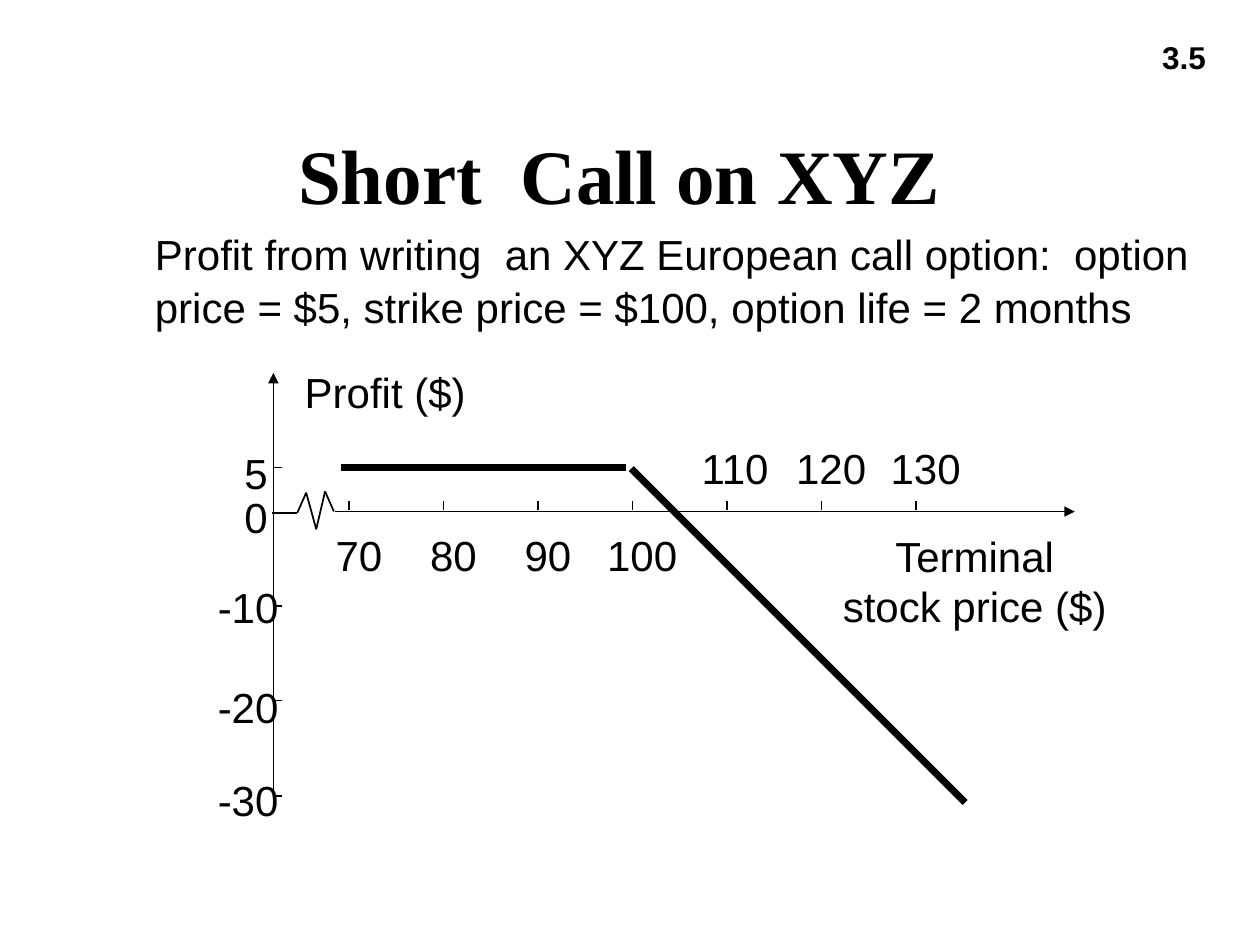
"""Build a slide with the profit diagram of a short call option."""
from itertools import pairwise

from pptx import Presentation
from pptx.dml.color import RGBColor
from pptx.enum.shapes import MSO_CONNECTOR as Connector
from pptx.enum.text import MSO_ANCHOR as Anchor, PP_ALIGN as Align
from pptx.oxml.ns import qn
from pptx.util import Inches, Pt
from lxml.etree import SubElement

BLACK = "000000"
PAGE_NUMBER = "3.5"
TITLE = "Short  Call on XYZ"
SUMMARY = ("Profit from writing  an XYZ European call option:  option "
           "price = $5, strike price = $100, option life = 2 months")
PRICES = [70, 80, 90, 100, 110, 120, 130]
STRIKE = 100
PROFITS = [(5, 3.5, 3.71), (0, 3.85, None), (-10, 4.57, 4.81),
           (-20, 5.36, 5.56), (-30, 6.1, 6.32)]
AXIS_X, AXIS_Y = 2.17, 4.06
FIRST_TICK, TICK_GAP = 2.77, 0.75
AXES = [((AXIS_X, 6.45), (AXIS_X, 2.96)), ((2.66, AXIS_Y), (8.53, AXIS_Y))]
AXIS_BREAK = [(2.16, 4.07), (2.36, 4.07), (2.43, 3.91), (2.51, 4.2),
              (2.58, 3.9), (2.65, 4.06)]
PAYOFF = [((2.71, 3.71), (4.97, 3.71)), ((5.01, 3.72), (7.66, 6.37))]


def color(value):
    return RGBColor.from_string(value)


def place(shape, left, top, width, height):
    for name, value in dict(left=left, top=top, width=width, height=height).items():
        setattr(shape, name, Inches(value))


def write(frame, lines, size=24, font="Arial", bold=False, **layout):
    for index, line in enumerate(lines):
        para = frame.paragraphs[0] if index == 0 else frame.add_paragraph()
        for name, value in layout.items():
            setattr(para, name, value)
        span = para.add_run()
        span.text = line
        style = dict(size=Pt(size), name=font, bold=bold)
        for name, value in style.items():
            setattr(span.font, name, value)
        span.font.color.rgb = color(BLACK)


def add_text(page, at, lines, wrap=False, **style):
    box = page.shapes.add_textbox(*map(Inches, at))
    box.text_frame.word_wrap = wrap
    write(box.text_frame, lines, **style)
    return box


def add_line(page, start, end, weight=1, arrow=False):
    line = page.shapes.add_connector(Connector.STRAIGHT, *map(Inches, start + end))
    line.line.color.rgb = color(BLACK)
    line.line.width = Pt(weight)
    if arrow:
        SubElement(line.line._get_or_add_ln(), qn("a:tailEnd"), type="triangle")
    SubElement(line._element.spPr, qn("a:effectLst"))


def add_header(page):
    add_text(page, (7.5, 0.25, 2.17, 0.5), [PAGE_NUMBER], True,
             size=18, bold=True, alignment=Align.RIGHT)
    title = page.shapes.title
    place(title, 0.5, 0.75, 8.83, 1.25)
    title.text_frame.vertical_anchor = Anchor.MIDDLE
    write(title.text_frame, [TITLE], 44, "Times New Roman", True,
          alignment=Align.CENTER)
    summary = add_text(page, (0.75, 1.75, 9, 4.5), [SUMMARY], True,
                       line_spacing=Pt(30), space_before=Pt(7))
    summary.text_frame.margin_left = Inches(0.48)


def add_diagram(page):
    for start, end in AXES:
        add_line(page, start, end, arrow=True)
    for start, end in pairwise(AXIS_BREAK):
        add_line(page, start, end)
    for index, price in enumerate(PRICES):
        x = FIRST_TICK + index * TICK_GAP
        add_line(page, (x, 3.98), (x, 4.05))
        width = 0.57 if price < 100 else 0.76
        top = 4.15 if price <= STRIKE else 3.46
        add_text(page, (x + 0.08 - width / 2, top, width, 0.5), [str(price)])
    for profit, top, tick in PROFITS:
        left, width = (1.63, 0.68) if profit < 0 else (1.84, 0.38)
        add_text(page, (left, top, width, 0.5), [str(profit)])
        if tick:
            add_line(page, (AXIS_X, tick), (AXIS_X + 0.07, tick))
    add_text(page, (2.32, 2.86, 1.48, 0.5), ["Profit ($)"])
    add_text(page, (6.59, 4.16, 2.29, 0.9), ["Terminal", "stock price ($)"],
             alignment=Align.CENTER)
    for start, end in PAYOFF:
        add_line(page, start, end, weight=4)


def main():
    deck = Presentation()
    deck.slide_width, deck.slide_height = Inches(10), Inches(7.5)
    page = deck.slides.add_slide(deck.slide_layouts[5])
    add_header(page)
    add_diagram(page)
    deck.save("out.pptx")


if __name__ == "__main__":
    main()
